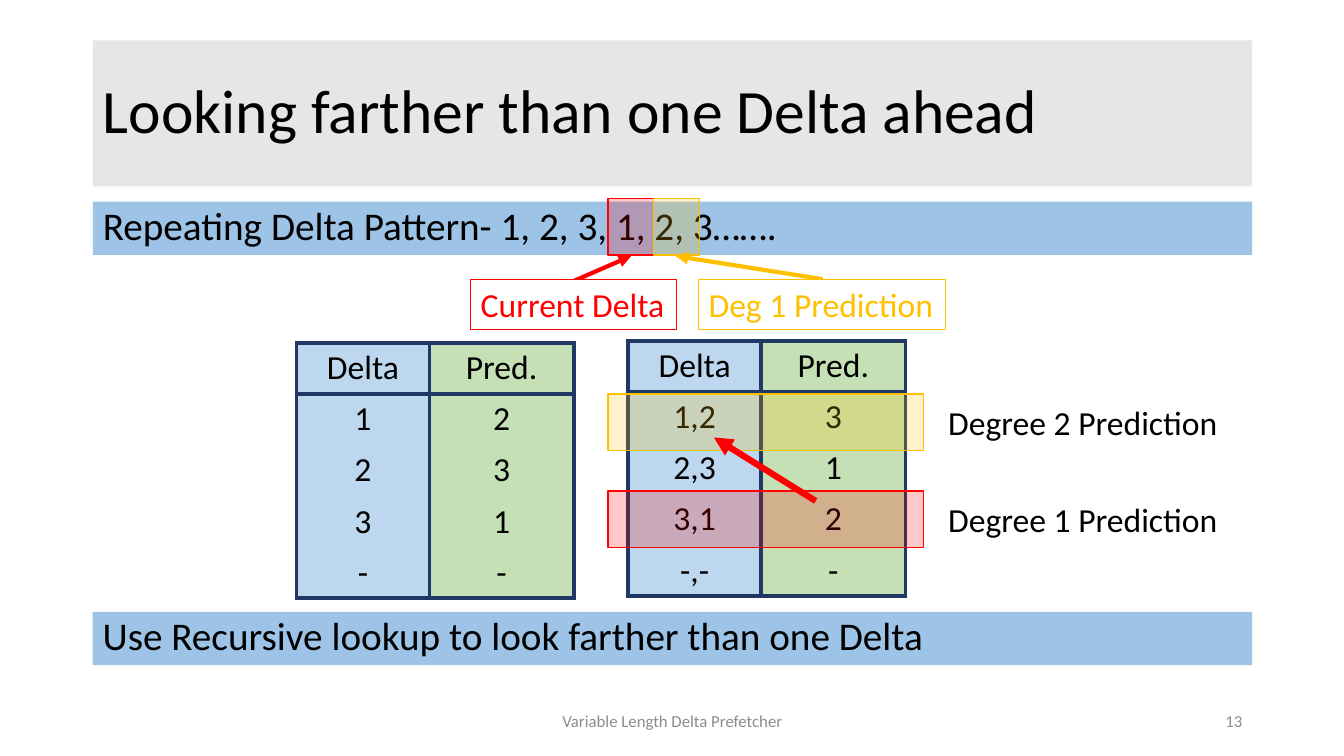
"""Build a slide on recursive delta lookup with two prediction tables."""
import dataclasses
import typing

import lxml.etree
import pptx
import pptx.dml.color
import pptx.enum.shapes
import pptx.enum.text
import pptx.oxml.ns
import pptx.util

Inches = pptx.util.Inches
ALIGN = pptx.enum.text.PP_ALIGN
ANCHOR = pptx.enum.text.MSO_ANCHOR


@dataclasses.dataclass(frozen=True)
class Theme:
    font: str = "Calibri"
    black: str = "000000"
    white: str = "FFFFFF"
    grey: str = "8C8C8C"
    title_fill: str = "E7E6E6"
    bar: str = "9DC3E6"
    red: str = "FF0000"
    gold: str = "FFC000"
    border: str = "203864"
    columns: tuple[str, str] = ("BDD7EE", "C5E0B4")
    title_size: int = 44
    bar_size: int = 28
    label_size: int = 24
    footer_size: int = 12
    opacity: int = 21


THEME = Theme()


@dataclasses.dataclass(frozen=True)
class TextBox:
    text: str
    at: tuple[float, float, float, float]
    size: int = THEME.label_size
    color: str = THEME.black
    align: ALIGN = ALIGN.LEFT
    anchor: ANCHOR = ANCHOR.TOP
    fill: str | None = None
    line: str | None = None
    wrap: bool = True
    spacing: float = 1.0
    before: int = 0


@dataclasses.dataclass(frozen=True)
class Highlight:
    at: tuple[float, float, float, float]
    color: str


@dataclasses.dataclass(frozen=True)
class Arrow:
    start: tuple[float, float]
    end: tuple[float, float]
    color: str
    width: float = 3


@dataclasses.dataclass(frozen=True)
class DeltaTable:
    left: float
    top: float
    rows: tuple[tuple[str, str], ...]


BAR = {"size": THEME.bar_size, "fill": THEME.bar, "spacing": 0.9, "before": 10}
FOOTER = {"size": THEME.footer_size, "color": THEME.grey, "anchor": ANCHOR.MIDDLE}
TITLE = TextBox("Looking farther than one Delta ahead", (0.92, 0.4, 11.5, 1.45), THEME.title_size,
                anchor=ANCHOR.MIDDLE, fill=THEME.title_fill, spacing=0.9)
PATTERN = TextBox("Repeating Delta Pattern- 1, 2, 3, 1, 2, 3…….", (0.92, 2, 11.5, 0.53), **BAR)
FOOTERS = (
    TextBox("Variable Length Delta Prefetcher", (4.42, 6.95, 4.5, 0.4), align=ALIGN.CENTER, **FOOTER),
    TextBox("13", (9.42, 6.95, 3, 0.4), align=ALIGN.RIGHT, **FOOTER),
)
TABLES = (
    DeltaTable(2.94, 3.4, (("Delta", "Pred."), ("1", "2"), ("2", "3"), ("3", "1"), ("-", "-"))),
    DeltaTable(6.23, 3.38, (("Delta", "Pred."), ("1,2", "3"), ("2,3", "1"), ("3,1", "2"), ("-,-", "-"))),
)
HIGHLIGHTS = (
    Highlight((6.03, 4.87, 3.13, 0.56), THEME.red),
    Highlight((6.03, 1.97, 0.45, 0.56), THEME.red),
    Highlight((6.48, 1.97, 0.46, 0.56), THEME.gold),
    Highlight((6.03, 3.91, 3.13, 0.56), THEME.gold),
)
ARROWS = (
    Arrow((5.57, 2.84), (6.26, 2.54), THEME.red),
    Arrow((8.16, 2.77), (6.7, 2.54), THEME.gold),
    Arrow((8.09, 4.97), (7.08, 4.34), THEME.red, 4.5),
)
LABELS = (
    TextBox("Degree 1 Prediction", (9.19, 4.9, 3.1, 0.5), align=ALIGN.CENTER),
    TextBox("Degree 2 Prediction", (9.19, 3.94, 3.1, 0.5), align=ALIGN.CENTER),
    TextBox("Use Recursive lookup to look farther than one Delta", (0.92, 6.07, 11.5, 0.53), **BAR),
    TextBox("Current Delta", (4.67, 2.77, 2.04, 0.5), color=THEME.red,
            fill=THEME.white, line=THEME.red, wrap=False),
    TextBox("Deg 1 Prediction", (6.93, 2.77, 2.45, 0.5), color=THEME.gold,
            fill=THEME.white, line=THEME.gold, wrap=False),
)


def rgb(color: str) -> pptx.dml.color.RGBColor:
    return pptx.dml.color.RGBColor.from_string(color)


def set_all(target: typing.Any, values: dict[str, typing.Any]) -> None:
    for name, value in values.items():
        setattr(target, name, value)


def add_xml(parent: typing.Any, tag: str, **attributes: str) -> typing.Any:
    return lxml.etree.SubElement(parent, pptx.oxml.ns.qn(tag), attributes)


def paint(fill: typing.Any, color: str) -> None:
    fill.solid()
    fill.fore_color.rgb = rgb(color)


def outline(line: typing.Any, color: str, width: float) -> None:
    paint(line.fill, color)
    line.width = pptx.util.Pt(width)


def write(para: typing.Any, text: str, size: int, color: str, align: ALIGN) -> None:
    para.alignment = align
    span = para.add_run()
    span.text = text
    set_all(span.font, {"name": THEME.font, "size": pptx.util.Pt(size), "bold": False})
    span.font.color.rgb = rgb(color)


def format_box(shape: typing.Any, box: TextBox) -> None:
    set_all(shape, dict(zip(("left", "top", "width", "height"), map(Inches, box.at))))
    if box.fill:
        paint(shape.fill, box.fill)
    if box.line:
        outline(shape.line, box.line, 0.75)
    set_all(shape.text_frame, {"word_wrap": box.wrap, "vertical_anchor": box.anchor,
                               "auto_size": pptx.enum.text.MSO_AUTO_SIZE.NONE})
    para = shape.text_frame.paragraphs[0]
    set_all(para, {"line_spacing": box.spacing, "space_before": pptx.util.Pt(box.before)})
    write(para, box.text, box.size, box.color, box.align)


def add_text(page: typing.Any, box: TextBox) -> None:
    format_box(page.shapes.add_textbox(*map(Inches, box.at)), box)


def add_highlight(page: typing.Any, highlight: Highlight) -> None:
    shape = page.shapes.add_shape(pptx.enum.shapes.MSO_SHAPE.RECTANGLE, *map(Inches, highlight.at))
    shape.shadow.inherit = False
    paint(shape.fill, highlight.color)
    tint = shape.fill._xPr.find(".//" + pptx.oxml.ns.qn("a:srgbClr"))
    add_xml(tint, "a:alpha", val=str(THEME.opacity * 1000))
    outline(shape.line, highlight.color, 1)


def add_arrow(page: typing.Any, arrow: Arrow) -> None:
    kind = pptx.enum.shapes.MSO_CONNECTOR.STRAIGHT
    connector = page.shapes.add_connector(kind, *map(Inches, arrow.start + arrow.end))
    outline(connector.line, arrow.color, arrow.width)
    add_xml(connector.line._get_or_add_ln(), "a:tailEnd", type="triangle")
    add_xml(connector._element.spPr, "a:effectLst")


def add_border(cell: typing.Any, side: str, visible: bool) -> None:
    edge = add_xml(cell._tc.get_or_add_tcPr(), f"a:ln{side}", w=str(pptx.util.Pt(3)))
    if visible:
        add_xml(add_xml(edge, "a:solidFill"), "a:srgbClr", val=THEME.border)
    else:
        add_xml(edge, "a:noFill")


def add_delta_table(page: typing.Any, spec: DeltaTable) -> None:
    count = len(spec.rows)
    frame = page.shapes.add_table(count, 2, *map(Inches, (spec.left, spec.top, 2.75, 2.5)))
    table = frame.table
    set_all(table, {"first_row": False, "horz_banding": False})
    for column, width in zip(table.columns, (1.32, 1.43)):
        column.width = Inches(width)
    for row, texts in enumerate(spec.rows):
        for column, text in enumerate(texts):
            cell = table.cell(row, column)
            write(cell.text_frame.paragraphs[0], text, THEME.label_size, THEME.black, ALIGN.CENTER)
            for side, visible in {"L": True, "R": True, "T": row < 2, "B": row in (0, count - 1)}.items():
                add_border(cell, side, visible)
            paint(cell.fill, THEME.columns[column])


def main() -> None:
    deck = pptx.Presentation()
    set_all(deck, {"slide_width": Inches(13.33), "slide_height": Inches(7.5)})
    page = deck.slides.add_slide(deck.slide_layouts[1])
    format_box(page.shapes.title, TITLE)
    body = page.placeholders[1]
    format_box(body, PATTERN)
    properties = body.text_frame.paragraphs[0]._p.get_or_add_pPr()
    for name in ("marL", "indent"):
        properties.set(name, "0")
    add_xml(properties, "a:buNone")
    for items, draw in ((FOOTERS, add_text), (TABLES, add_delta_table), (HIGHLIGHTS, add_highlight),
                        (ARROWS, add_arrow), (LABELS, add_text)):
        for item in items:
            draw(page, item)
    deck.save("out.pptx")


if __name__ == "__main__":
    main()
